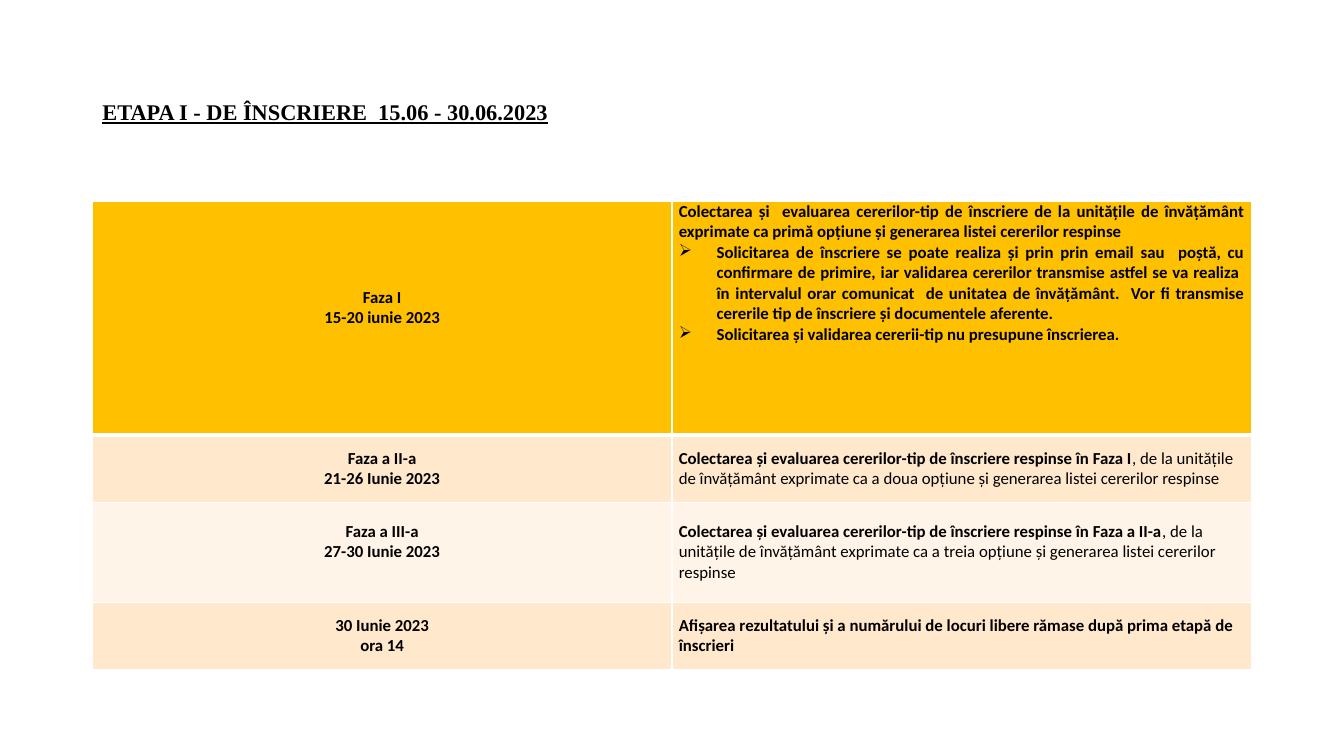
from dataclasses import dataclass
from lxml import etree
from pptx import Presentation
from pptx.dml.color import RGBColor
from pptx.enum.text import MSO_ANCHOR, MSO_AUTO_SIZE, PP_ALIGN
from pptx.oxml.ns import qn
from pptx.util import Pt

TITLE_ONLY = 5
TOP, MIDDLE = MSO_ANCHOR.TOP, MSO_ANCHOR.MIDDLE
LEFT, CENTER, JUSTIFY = PP_ALIGN.LEFT, PP_ALIGN.CENTER, PP_ALIGN.JUSTIFY
NO_AUTOFIT = MSO_AUTO_SIZE.NONE


@dataclass(frozen=True)
class Theme:
    text: str = "000000"
    border: str = "FFFFFF"
    header: str = "FFC000"
    band_dark: str = "FFE8CC"
    band_light: str = "FFF4E7"
    title_font: str = "Times New Roman"
    body_font: str = "Calibri"
    title_size: float = 16
    body_size: float = 12
    line_height: float = 14.65


THEME = Theme()

TITLE = "ETAPA I - DE ÎNSCRIERE  15.06 - 30.06.2023"
RESPINSE = "Colectarea și evaluarea cererilor-tip de înscriere respinse în "
PHASES = [
    {
        "height": 167, "fill": THEME.header, "lift": True,
        "when": ["Faza I", "15-20 iunie 2023"],
        "lead": "Colectarea și  evaluarea cererilor-tip de înscriere de la unitățile de "
                "învățământ exprimate ca primă opțiune și generarea listei cererilor respinse",
        "bullets": [
            "Solicitarea de înscriere se poate realiza și prin prin email sau  poștă, cu "
            "confirmare de primire, iar validarea cererilor transmise astfel se va realiza  "
            "în intervalul orar comunicat  de unitatea de învățământ.  Vor fi transmise "
            "cererile tip de înscriere și documentele aferente.",
            "Solicitarea și validarea cererii-tip nu presupune înscrierea.",
        ],
    },
    {
        "height": 48, "fill": THEME.band_dark,
        "when": ["Faza a II-a", "21-26 Iunie 2023"],
        "lead": RESPINSE + "Faza I",
        "rest": ", de la unitățile de învățământ exprimate ca a doua opțiune și "
                "generarea listei cererilor respinse",
    },
    {
        "height": 71.5, "fill": THEME.band_light, "lift": True,
        "when": ["Faza a III-a", "27-30 Iunie 2023"],
        "lead": RESPINSE + "Faza a II-a",
        "rest": ", de la unitățile de învățământ exprimate ca a treia opțiune și "
                "generarea listei cererilor respinse",
    },
    {
        "height": 48, "fill": THEME.band_dark,
        "when": ["30 Iunie 2023", "ora 14"],
        "lead": "Afișarea rezultatului și a numărului de locuri libere rămase după "
                "prima etapă de înscrieri",
    },
]

X, WIDTH = 66, 828
TITLE_Y, TITLE_H = 28.75, 104.4
TABLE_Y = 143.75
CELL_INSET = 4.9
BULLET_INDENT = 27
THIN, THICK = 1, 3


def add_run(p, text, bold=True, font=THEME.body_font, size=THEME.body_size):
    r = p.add_run()
    r.text = text
    r.font.name, r.font.size, r.font.bold = font, Pt(size), bold
    r.font.color.rgb = RGBColor.from_string(THEME.text)
    return r


def set_bullet(p):
    pPr = p._p.get_or_add_pPr()
    pPr.set("marL", str(Pt(BULLET_INDENT)))
    pPr.set("indent", str(-Pt(BULLET_INDENT)))
    etree.SubElement(pPr, qn("a:buChar")).set("char", "➢")


def set_borders(cell, top, bottom):
    tcPr = cell._tc.get_or_add_tcPr()
    for side, width in (("L", THIN), ("R", THIN), ("T", top), ("B", bottom)):
        ln = etree.SubElement(tcPr, qn(f"a:ln{side}"), w=str(Pt(width)))
        fill = etree.SubElement(ln, qn("a:solidFill"))
        etree.SubElement(fill, qn("a:srgbClr")).set("val", THEME.border)


def write_cell(cell, paragraphs, anchor, lift=False):
    cell.vertical_anchor = anchor
    cell.margin_left = cell.margin_right = Pt(CELL_INSET)
    cell.margin_top = Pt(0)
    cell.margin_bottom = Pt(THEME.line_height if lift else 0)
    tf = cell.text_frame
    for i, (runs, align, bullet) in enumerate(paragraphs):
        p = tf.add_paragraph() if i else tf.paragraphs[0]
        p.alignment = align
        if bullet:
            set_bullet(p)
        for text, bold in runs:
            add_run(p, text, bold)


def add_title(s):
    sp = s.shapes.title
    sp.left, sp.top, sp.width, sp.height = Pt(X), Pt(TITLE_Y), Pt(WIDTH), Pt(TITLE_H)
    tf = sp.text_frame
    tf.word_wrap = True
    tf.auto_size = NO_AUTOFIT
    tf.vertical_anchor = MIDDLE
    p = tf.paragraphs[0]
    p.alignment, p.line_spacing = LEFT, 0.9
    r = add_run(p, TITLE, font=THEME.title_font, size=THEME.title_size)
    r.font.underline = True


def add_phases(s):
    height = sum(phase["height"] for phase in PHASES)
    table = s.shapes.add_table(
        len(PHASES), 2, Pt(X), Pt(TABLE_Y), Pt(WIDTH), Pt(height)).table
    for col in table.columns:
        col.width = Pt(WIDTH / 2)
    for i, phase in enumerate(PHASES):
        table.rows[i].height = Pt(phase["height"])
        when, what = table.cell(i, 0), table.cell(i, 1)
        bullets = phase.get("bullets", [])
        align, anchor = (JUSTIFY, TOP) if bullets else (LEFT, MIDDLE)
        lead = [(phase["lead"], True)]
        if "rest" in phase:
            lead.append((phase["rest"], False))
        write_cell(when, [([(line, True)], CENTER, False) for line in phase["when"]],
                   MIDDLE, phase.get("lift", False))
        write_cell(what, [(lead, align, False)]
                   + [([(line, True)], align, True) for line in bullets], anchor)
        for cell in (when, what):
            set_borders(cell, THICK if i == 1 else THIN, THICK if i == 0 else THIN)
            cell.fill.solid()
            cell.fill.fore_color.rgb = RGBColor.from_string(phase["fill"])


def main():
    prs = Presentation()
    prs.slide_width, prs.slide_height = Pt(960), Pt(540)
    s = prs.slides.add_slide(prs.slide_layouts[TITLE_ONLY])
    add_title(s)
    add_phases(s)
    prs.save("out.pptx")


if __name__ == "__main__":
    main()
